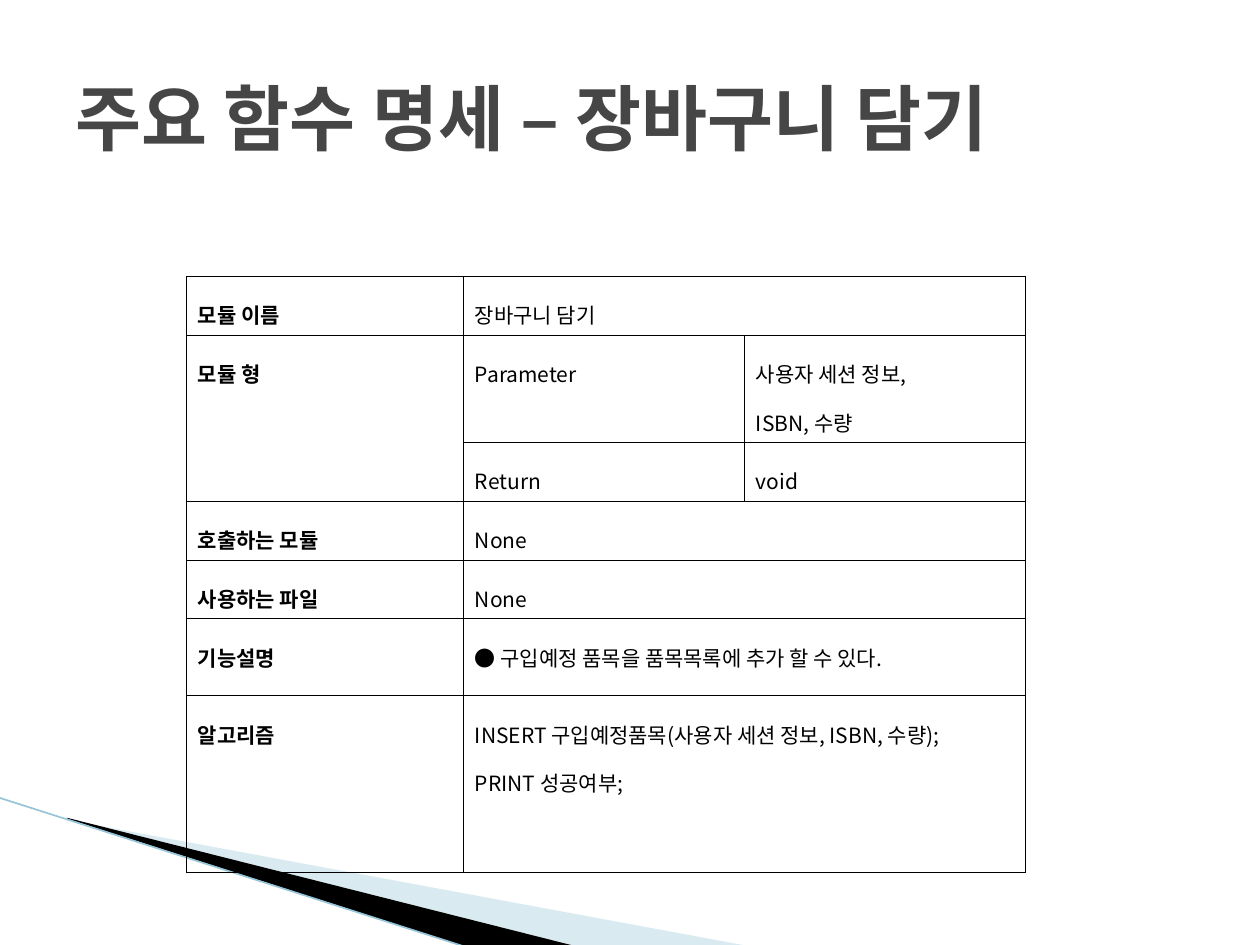
from lxml import etree
from pptx import Presentation
from pptx.dml.color import RGBColor
from pptx.enum.shapes import MSO_CONNECTOR
from pptx.enum.text import MSO_ANCHOR, PP_ALIGN
from pptx.oxml.ns import qn
from pptx.util import Inches, Pt

BLACK = RGBColor(0x00, 0x00, 0x00)
GRAY = RGBColor(0x46, 0x46, 0x46)
PALE = RGBColor(0xA0, 0xCB, 0xDC)
BLUE = RGBColor(0x97, 0xC5, 0xD8)
LINE = MSO_CONNECTOR.STRAIGHT
MIDDLE = MSO_ANCHOR.MIDDLE
LEFT, JUSTIFY = PP_ALIGN.LEFT, PP_ALIGN.JUSTIFY
SANS, MONO = "Noto Sans CJK KR", "Noto Sans Mono"


def write(par, text, size, face, color, bold):
    run = par.add_run()
    run.text = text
    style = {"size": Pt(size), "name": face, "bold": bold}
    for key, value in style.items():
        setattr(run.font, key, value)
    run.font.color.rgb = color
    east = etree.SubElement(run.font._element, qn("a:ea"))
    east.set("typeface", SANS)


def border(cell):
    props = cell._tc.get_or_add_tcPr()
    for side in ("lnL", "lnR", "lnT", "lnB"):
        edge = etree.SubElement(props, qn("a:" + side), w=str(Pt(0.25)))
        fill = etree.SubElement(edge, qn("a:solidFill"))
        etree.SubElement(fill, qn("a:srgbClr"), val=str(BLACK))


deck = Presentation()
deck.slide_width, deck.slide_height = Inches(10), Inches(7.5)
slide = deck.slides.add_slide(deck.slide_layouts[5])
shapes = slide.shapes

wedges = [
    (PALE, 40, [(0.55, 6.51), (5.95, 7.51), (4.56, 7.51), (0.55, 6.5)]),
    (BLACK, 100, [(0.53, 6.49), (4.57, 7.51), (3.72, 7.52), (0.54, 6.5)]),
]
for color, alpha, points in wedges:
    spots = [(Inches(x), Inches(y)) for x, y in points]
    pen = shapes.build_freeform(*spots[0])
    pen.add_line_segments(spots[1:], close=True)
    wedge = pen.convert_to_shape()
    wedge.shadow.inherit = False
    wedge.line.fill.background()
    wedge.fill.solid()
    wedge.fill.fore_color.rgb = color
    if alpha < 100:
        tint = wedge._element.spPr.find(".//" + qn("a:srgbClr"))
        etree.SubElement(tint, qn("a:alpha"), val=str(alpha * 1000))

edge = shapes.add_connector(LINE, Inches(-0.01), Inches(6.33), Inches(3.71), Inches(7.52))
edge.line.color.rgb = BLUE
edge.line.width = Pt(0.95)
etree.SubElement(edge._element.spPr, qn("a:effectLst"))

title = shapes.title
place = {"left": 0.5, "top": 0.3, "width": 9, "height": 1.25}
for key, value in place.items():
    setattr(title, key, Inches(value))
title.text_frame.vertical_anchor = MIDDLE
par = title.text_frame.paragraphs[0]
par.alignment = LEFT
write(par, "주요 함수 명세 – 장바구니 담기", 41, MONO, GRAY, True)

rows = [
    (0.35, "모듈 이름", "장바구니 담기", None),
    (0.35, "모듈 형", "Parameter", "사용자 세션 정보,\nISBN, 수량"),
    (0.35, None, "Return", "void"),
    (0.39, "호출하는 모듈", "None", None),
    (0.39, "사용하는 파일", "None", None),
    (0.61, "기능설명", "● 구입예정 품목을 품목목록에 추가 할 수 있다.", None),
    (1.4, "알고리즘", "INSERT 구입예정품목(사용자 세션 정보, ISBN, 수량);\nPRINT 성공여부;", None),
]
frame = shapes.add_table(len(rows), 3, Inches(1.48), Inches(2.19), Inches(6.66), Inches(3.84))
table = frame.table
table.first_row = table.horz_banding = False
for col, width in zip(table.columns, (2.2, 2.23, 2.23)):
    col.width = Inches(width)

inset = {"margin_left": 0.09, "margin_right": 0.09, "margin_top": 0.04, "margin_bottom": 0.04}
for r, (height, *texts) in enumerate(rows):
    table.rows[r].height = Inches(height)
    for c, text in enumerate(texts):
        cell = table.cell(r, c)
        for key, value in inset.items():
            setattr(cell, key, Inches(value))
        border(cell)
        cell.fill.background()
        for n, line in enumerate(text.split("\n") if text else []):
            body = cell.text_frame
            par = body.add_paragraph() if n else body.paragraphs[0]
            par.alignment = JUSTIFY
            par.line_spacing = 1.6
            write(par, line, 12, SANS, BLACK, c == 0)
    if texts[2] is None:
        table.cell(r, 1).merge(table.cell(r, 2))
table.cell(1, 0).merge(table.cell(2, 0))

deck.save("out.pptx")
